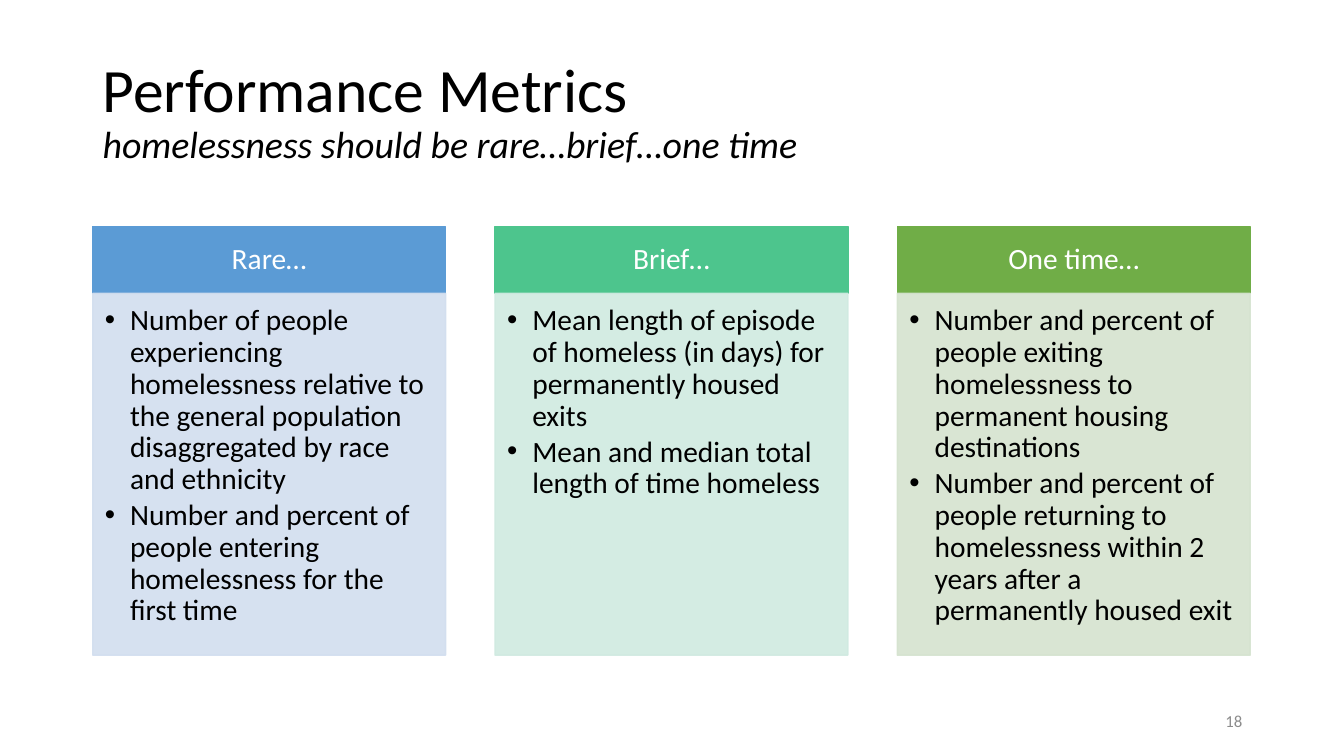
from lxml.etree import SubElement
from pptx import Presentation
from pptx.dml.color import RGBColor
from pptx.enum.shapes import MSO_SHAPE as SHAPE
from pptx.enum.text import MSO_ANCHOR as ANCHOR, PP_ALIGN as ALIGN
from pptx.oxml.ns import qn
from pptx.util import Inches, Pt

BLACK = RGBColor(0x00, 0x00, 0x00)
WHITE = RGBColor(0xFF, 0xFF, 0xFF)
GRAY = RGBColor(0x8C, 0x8C, 0x8C)
BLUE = RGBColor(0x5B, 0x9B, 0xD5)
PALE_BLUE = RGBColor(0xD2, 0xDE, 0xEF)
TEAL = RGBColor(0x4D, 0xC5, 0x8D)
PALE_TEAL = RGBColor(0xD0, 0xEA, 0xE1)
GREEN = RGBColor(0x70, 0xAD, 0x47)
PALE_GREEN = RGBColor(0xD5, 0xE3, 0xCF)

LEFT, COLUMN_STEP, COLUMN_WIDTH = 0.92, 3.99, 3.5
HEADER_TOP, HEADER_HEIGHT, BODY_HEIGHT = 2.25, 0.66, 3.59

COLUMNS = [
    ("Rare…", BLUE, PALE_BLUE, [
        "Number of people experiencing homelessness relative to the general "
        "population disaggregated by race and ethnicity",
        "Number and percent of people entering homelessness for the first time"]),
    ("Brief…", TEAL, PALE_TEAL, [
        "Mean length of episode of homeless (in days) for permanently housed exits",
        "Mean and median total length of time homeless"]),
    ("One time…", GREEN, PALE_GREEN, [
        "Number and percent of people exiting homelessness to permanent "
        "housing destinations",
        "Number and percent of people returning to homelessness within 2 years "
        "after a permanently housed exit"]),
]


class SlideBuilder:
    font = "Calibri"
    text_size = 21

    def __init__(self, slide):
        self.slide = slide

    def style(self, r, size, color, italic=False):
        r.font.name = self.font
        r.font.size = Pt(size)
        r.font.color.rgb = color
        r.font.italic = italic

    def frame(self, sp, anchor, insets):
        tf = sp.text_frame
        tf.word_wrap = True
        tf.vertical_anchor = anchor
        tf.margin_left, tf.margin_top, tf.margin_right, tf.margin_bottom = map(
            Inches, insets)
        return tf

    def text(self, x, y, w, h, lines, align=ALIGN.LEFT, spacing=1.0):
        """Each line is (wording, size, color, italic)."""
        sp = self.slide.shapes.add_textbox(*map(Inches, (x, y, w, h)))
        p = self.frame(sp, ANCHOR.MIDDLE, (0.1, 0.05, 0.1, 0.05)).paragraphs[0]
        p.alignment = align
        p.line_spacing = spacing
        for i, (wording, size, color, italic) in enumerate(lines):
            if i:
                p.add_line_break()
            r = p.add_run()
            r.text = wording
            self.style(r, size, color, italic)

    def box(self, x, y, w, h, color, alpha=100):
        sp = self.slide.shapes.add_shape(SHAPE.RECTANGLE, *map(Inches, (x, y, w, h)))
        sp.shadow.inherit = False
        sp.fill.solid()
        sp.fill.fore_color.rgb = color
        sp.line.color.rgb = color
        sp.line.width = Pt(1)
        if alpha < 100:
            for clr in sp.element.spPr.iter(qn("a:srgbClr")):
                SubElement(clr, qn("a:alpha"), val=str(alpha * 1000))
        return sp

    def header(self, x, y, w, h, wording, color):
        sp = self.box(x, y, w, h, color)
        p = self.frame(sp, ANCHOR.MIDDLE, (0.16, 0.09, 0.16, 0.09)).paragraphs[0]
        p.text = wording
        p.alignment = ALIGN.CENTER
        p.line_spacing = 0.9
        self.style(p.runs[0], self.text_size, WHITE)

    def bullets(self, x, y, w, h, items, color):
        sp = self.box(x, y, w, h, color, alpha=90)
        tf = self.frame(sp, ANCHOR.TOP, (0.12, 0.12, 0.16, 0.18))
        for i, item in enumerate(items):
            p = tf.add_paragraph() if i else tf.paragraphs[0]
            p.text = item
            p.alignment = ALIGN.LEFT
            p.line_spacing = 0.9
            p.space_after = Pt(3)
            pPr = p._p.get_or_add_pPr()
            pPr.set("marL", str(Inches(0.25)))
            pPr.set("indent", str(-Inches(0.25)))
            SubElement(pPr, qn("a:buFont"), typeface="Arial")
            SubElement(pPr, qn("a:buChar"), char="•")
            self.style(p.runs[0], self.text_size, BLACK)


def main():
    prs = Presentation()
    prs.slide_width, prs.slide_height = Inches(13.33), Inches(7.5)
    s = SlideBuilder(prs.slides.add_slide(prs.slide_layouts[6]))

    # Title and subtitle
    s.text(LEFT, 0.4, 11.5, 1.45, [
        ("Performance Metrics", 44, BLACK, False),
        ("homelessness should be rare…brief…one time", 27, BLACK, True),
    ], spacing=0.9)

    # Metric columns
    for i, (heading, color, pale, items) in enumerate(COLUMNS):
        x = LEFT + i * COLUMN_STEP
        s.header(x, HEADER_TOP, COLUMN_WIDTH, HEADER_HEIGHT, heading, color)
        s.bullets(x, HEADER_TOP + HEADER_HEIGHT, COLUMN_WIDTH, BODY_HEIGHT,
                  items, pale)

    # Slide number
    s.text(9.42, 6.95, 3, 0.4, [("18", 12, GRAY, False)], align=ALIGN.RIGHT)

    prs.save("out.pptx")


if __name__ == "__main__":
    main()
